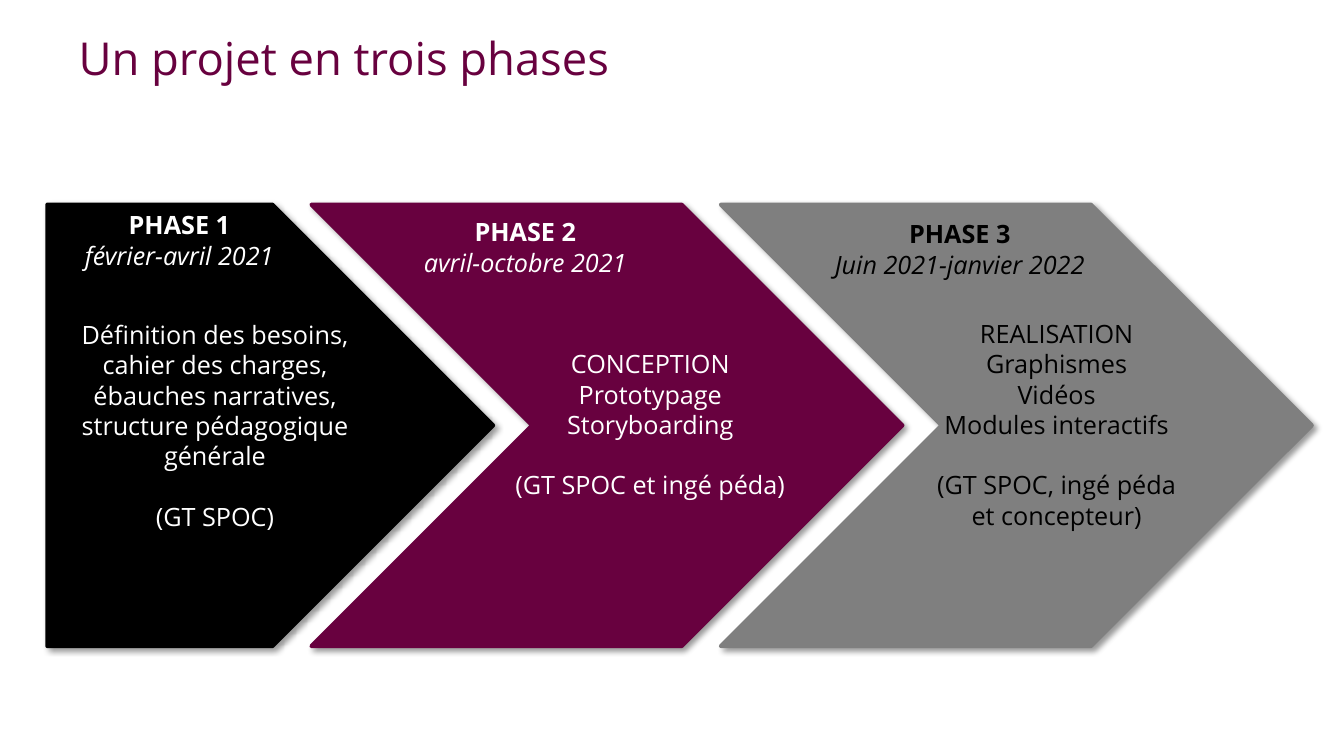
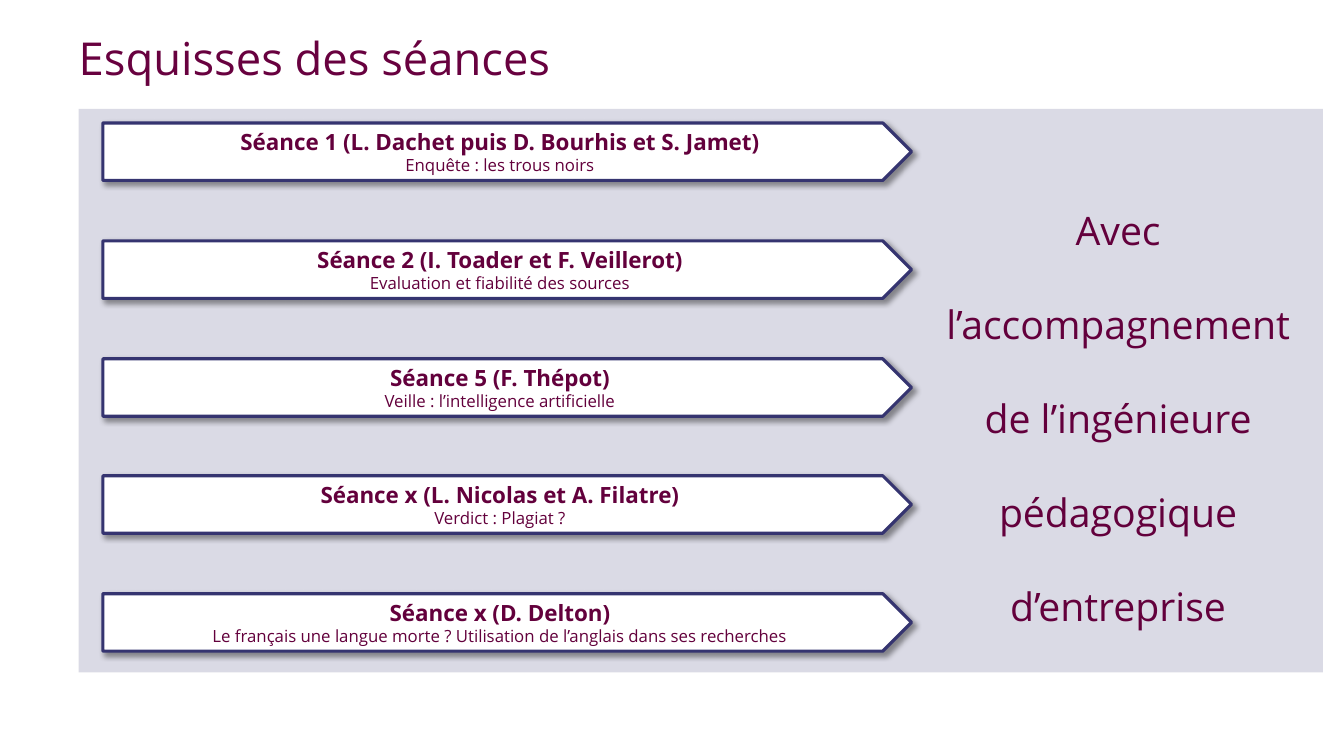
from dataclasses import dataclass
from typing import Optional

from lxml import etree
from pptx import Presentation
from pptx.dml.color import RGBColor
from pptx.enum.shapes import MSO_SHAPE
from pptx.enum.text import MSO_ANCHOR, MSO_AUTO_SIZE, PP_ALIGN
from pptx.oxml import parse_xml
from pptx.oxml.ns import nsdecls, qn
from pptx.util import Emu, Pt

PX = 9144
FONT = "Open Sans"
BLACK = RGBColor(0x00, 0x00, 0x00)
WHITE = RGBColor(0xFF, 0xFF, 0xFF)
GREY = RGBColor(0x7F, 0x7F, 0x7F)
PLUM = RGBColor(0x68, 0x01, 0x3F)
DARK_PLUM = RGBColor(0x63, 0x00, 0x3C)
INDIGO = RGBColor(0x35, 0x34, 0x70)

PENTAGON = MSO_SHAPE.PENTAGON
CHEVRON = MSO_SHAPE.CHEVRON
RECTANGLE = MSO_SHAPE.RECTANGLE
CENTER = PP_ALIGN.CENTER
LEFT = PP_ALIGN.LEFT
MIDDLE = MSO_ANCHOR.MIDDLE
TOP = MSO_ANCHOR.TOP
FIT_SHAPE = MSO_AUTO_SIZE.SHAPE_TO_FIT_TEXT
NO_FIT = MSO_AUTO_SIZE.NONE

Box = tuple[int, int, int, int]
TITLE_BOX: Box = (68, 30, 1113, 61)
PHASE_TOP, PHASE_HEIGHT = 203, 438
SESSION_TOP, SESSION_SPAN = 122, 467


@dataclass(frozen=True)
class Para:
    text: str
    size: float = 18
    bold: bool = False
    italic: bool = False
    before: float = 0
    spacing: Optional[float] = None


@dataclass(frozen=True)
class Phase:
    name: str
    dates: str
    kind: MSO_SHAPE
    left: int
    width: int
    fill: RGBColor
    ink: RGBColor
    head_box: Box
    body: tuple[str, ...]
    team: str
    body_box: Optional[Box] = None
    body_wraps: bool = True


@dataclass(frozen=True)
class Session:
    heading: str
    topic: str


PHASES = (
    Phase("PHASE 1", "février-avril 2021", PENTAGON, 47, 442, BLACK, WHITE,
          (73, 203, 210, 71),
          ("Définition des besoins, cahier des charges, ébauches narratives, "
           "structure pédagogique générale",), "(GT SPOC)"),
    Phase("PHASE 2", "avril-octobre 2021", CHEVRON, 309, 586, PLUM, WHITE,
          (409, 210, 224, 71),
          ("CONCEPTION", "Prototypage", "Storyboarding"),
          "(GT SPOC et ingé péda)", (500, 341, 290, 162), False),
    Phase("PHASE 3", "Juin 2021-janvier 2022", CHEVRON, 715, 586, GREY, BLACK,
          (817, 212, 270, 71),
          ("REALISATION", "Graphismes", "Vidéos", "Modules interactifs"),
          "(GT SPOC, ingé péda et concepteur)", (913, 311, 270, 222)),
)

SESSIONS = (
    Session("Séance 1 (L. Dachet puis D. Bourhis et S. Jamet)",
            "Enquête : les trous noirs"),
    Session("Séance 2 (I. Toader et F. Veillerot)",
            "Evaluation et fiabilité des sources"),
    Session("Séance 5 (F. Thépot)", "Veille : l’intelligence artificielle"),
    Session("Séance x (L. Nicolas et A. Filatre)", "Verdict : Plagiat ?"),
    Session("Séance x (D. Delton)",
            "Le français une langue morte ? Utilisation de l’anglais "
            "dans ses recherches"),
)


def emu(box: Box) -> list[Emu]:
    return [Emu(v * PX) for v in box]


def write(tf, paras: list[Para], color: RGBColor, align=CENTER,
          anchor=MIDDLE, wrap: bool = True) -> None:
    tf.word_wrap = wrap
    tf.vertical_anchor = anchor
    for i, para in enumerate(paras):
        p = tf.add_paragraph() if i else tf.paragraphs[0]
        p.text = para.text
        p.alignment = align
        p.space_before = Pt(para.before)
        if para.spacing:
            p.line_spacing = para.spacing
        p.font.name = FONT
        p.font.size = Pt(para.size)
        p.font.bold = para.bold
        p.font.italic = para.italic
        p.font.color.rgb = color


def add_text(s, box: Box, paras: list[Para], color: RGBColor,
             wrap: bool = True) -> None:
    tf = s.shapes.add_textbox(*emu(box)).text_frame
    write(tf, paras, color, anchor=TOP, wrap=wrap)
    tf.auto_size = FIT_SHAPE


def add_shadow(sp) -> None:
    sp.shadow.inherit = False
    effects = sp._element.spPr.find(qn("a:effectLst"))
    effects.append(parse_xml(
        f'<a:outerShdw {nsdecls("a")} blurRad="50800" dist="38100" '
        'dir="2700000" algn="tl" rotWithShape="0"><a:srgbClr val="000000">'
        '<a:alpha val="40000"/></a:srgbClr></a:outerShdw>'))


def add_arrow(s, kind, box: Box, fill: RGBColor, line: RGBColor,
              line_width: float):
    sp = s.shapes.add_shape(kind, *emu(box))
    sp.fill.solid()
    sp.fill.fore_color.rgb = fill
    sp.line.color.rgb = line
    sp.line.width = Pt(line_width)
    add_shadow(sp)
    return sp


def add_band(s, box: Box, color: RGBColor, opacity: int) -> None:
    sp = s.shapes.add_shape(RECTANGLE, *emu(box))
    sp.fill.solid()
    sp.fill.fore_color.rgb = color
    sp.line.fill.background()
    sp.shadow.inherit = False
    clr = sp._element.spPr.find(qn("a:solidFill"))[0]
    etree.SubElement(clr, qn("a:alpha")).set("val", str(opacity * 1000))


def add_titled_slide(prs, title: str):
    s = prs.slides.add_slide(prs.slide_layouts[5])
    sp = s.shapes.title
    sp.left, sp.top, sp.width, sp.height = emu(TITLE_BOX)
    write(sp.text_frame, [Para(title, 32.4, spacing=0.9)], PLUM, LEFT)
    sp.text_frame.auto_size = NO_FIT
    return s


def add_phase(s, phase: Phase) -> None:
    box = (phase.left, PHASE_TOP, phase.width, PHASE_HEIGHT)
    sp = add_arrow(s, phase.kind, box, phase.fill, phase.fill, 3)
    body = [Para(t) for t in phase.body] + [Para(phase.team, before=21.6)]
    if phase.body_box:
        add_text(s, phase.body_box, body, phase.ink, phase.body_wraps)
    else:
        write(sp.text_frame, body, phase.ink)
    head = [Para(phase.name, bold=True), Para(phase.dates, italic=True)]
    add_text(s, phase.head_box, head, phase.ink, wrap=False)


def add_session(s, top: int, session: Session) -> None:
    sp = add_arrow(s, PENTAGON, (102, top, 802, 57), WHITE, INDIGO, 2.25)
    write(sp.text_frame, [Para(session.heading, 16, bold=True),
                          Para(session.topic, 12)], DARK_PLUM)
    sp.text_frame.auto_size = FIT_SHAPE


def main() -> None:
    prs = Presentation()
    prs.slide_width, prs.slide_height = Emu(1333 * PX), Emu(750 * PX)

    s = add_titled_slide(prs, "Un projet en trois phases")
    for phase in PHASES:
        add_phase(s, phase)

    s = add_titled_slide(prs, "Esquisses des séances")
    add_band(s, (78, 108, 1234, 559), INDIGO, 18)
    for i, session in enumerate(SESSIONS):
        offset = round(i * SESSION_SPAN / (len(SESSIONS) - 1))
        add_session(s, SESSION_TOP + offset, session)
    add_text(s, (921, 153, 376, 468),
             [Para("Avec l’accompagnement de l’ingénieure pédagogique "
                   "d’entreprise", 28, spacing=2)], DARK_PLUM)

    prs.save("out.pptx")


if __name__ == "__main__":
    main()
